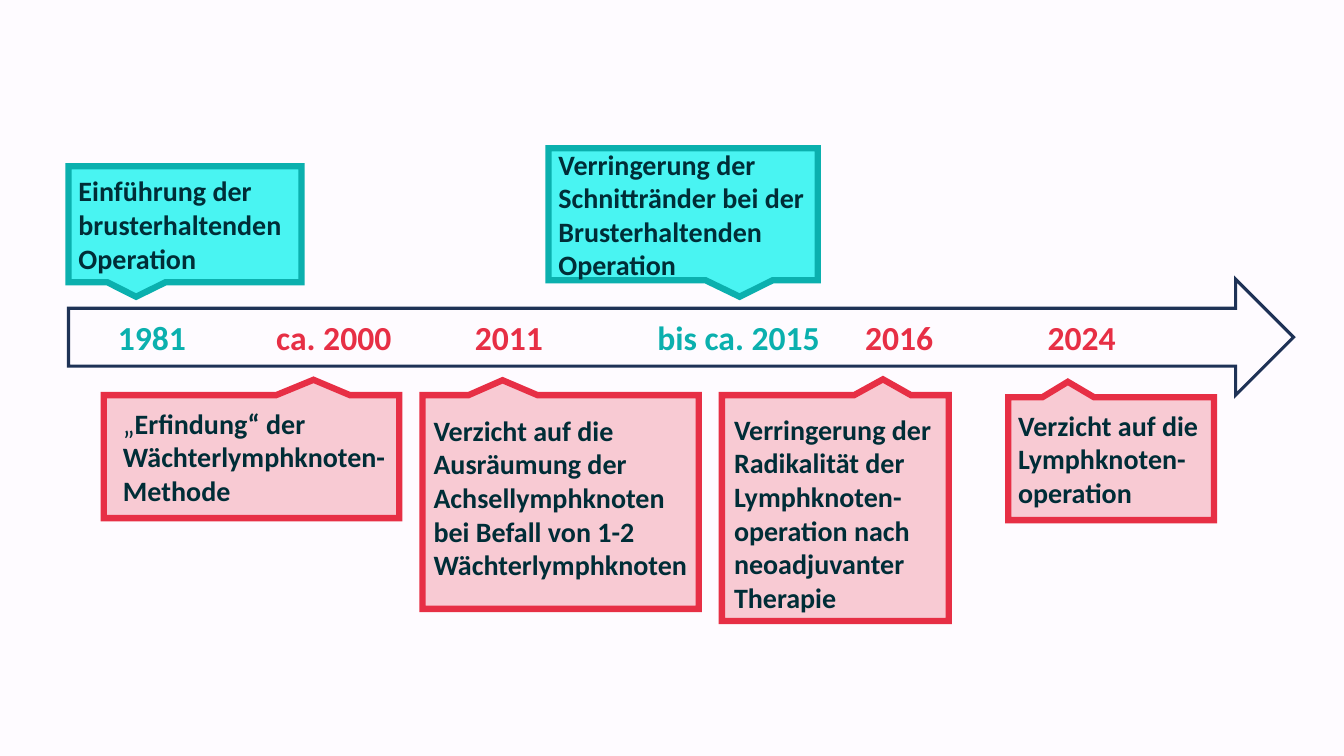
from lxml import etree
from pptx import Presentation
from pptx.dml.color import RGBColor
from pptx.enum.shapes import MSO_SHAPE as Shape
from pptx.enum.text import MSO_ANCHOR as Anchor
from pptx.oxml.ns import qn
from pptx.util import Inches, Pt

COLORS = {
    "paper": "FEFBFF", "navy": "1E3256", "ink": "002D37",
    "teal": "0BB0AE", "aqua": "49F4F2", "red": "E72F45", "rose": "F8CAD3",
}
COLS, ROWS = 133.3, 75


def rgb(name):
    return RGBColor.from_string(COLORS[name])


def add_text(p, text, size=20, color="ink", bold=True, font="Calibri"):
    r = p.add_run()
    r.text = text
    r.font.name, r.font.size, r.font.bold = font, Pt(size), bold
    r.font.color.rgb = rgb(color)


class Timeline:
    """Draws on one slide in grid units of 133.3 columns by 75 rows."""

    def __init__(self, prs):
        self.cell_w = prs.slide_width / COLS
        self.cell_h = prs.slide_height / ROWS
        self.s = prs.slides.add_slide(prs.slide_layouts[6])
        fill = self.s.background.fill
        fill.solid()
        fill.fore_color.rgb = rgb("paper")

    def x(self, cols):
        return round(cols * self.cell_w)

    def y(self, rows):
        return round(rows * self.cell_h)

    def box(self, left, top, width, height):
        return self.x(left), self.y(top), self.x(width), self.y(height)

    def shape(self, kind, at, line, weight, fill=None):
        sp = self.s.shapes.add_shape(kind, *self.box(*at))
        sp.shadow.inherit = False
        if fill:
            sp.fill.solid()
            sp.fill.fore_color.rgb = rgb(fill)
        else:
            sp.fill.background()
        sp.line.color.rgb = rgb(line)
        sp.line.width = Pt(weight)
        ln = sp.line._get_or_add_ln()
        etree.SubElement(ln, qn("a:miter"), lim="800000")
        return sp

    def frame(self, sp, left, top, right=0.5, bottom=0.5, anchor=Anchor.TOP):
        """Set wrapping, insets and anchor; return the first paragraph."""
        tf = sp.text_frame
        tf.word_wrap, tf.vertical_anchor = True, anchor
        tf.margin_left, tf.margin_right = self.x(left), self.x(right)
        tf.margin_top, tf.margin_bottom = self.y(top), self.y(bottom)
        p = tf.paragraphs[0]
        p.alignment = 1
        return p

    def callout(self, at, tip, runs, line, fill, inset, anchor):
        sp = self.shape(Shape.RECTANGULAR_CALLOUT, at, line, 4.5, fill)
        sp.adjustments[0], sp.adjustments[1] = tip
        p = self.frame(sp, *inset, anchor=anchor)
        for text, bold in runs:
            add_text(p, text, bold=bold)

    def above(self, at, side, text):
        self.callout(at, (side * 0.21, 0.625), [(text, True)],
                     "teal", "aqua", (1, 0.5), Anchor.MIDDLE)

    def below(self, at, side, inset, *runs, reach=0.625):
        self.callout(at, (side * 0.21, -reach), runs,
                     "red", "rose", inset, Anchor.TOP)

    def years(self, at, entries):
        """Write the years on one line, each at its own tab stop."""
        start = entries[0][0]
        p = self.frame(self.s.shapes.add_textbox(*self.box(*at)), start - at[0], 0.5)
        tabs = etree.SubElement(p._p.get_or_add_pPr(), qn("a:tabLst"))
        for i, (col, year, color) in enumerate(entries):
            if i:
                etree.SubElement(tabs, qn("a:tab"), pos=str(self.x(col - start)), algn="l")
            add_text(p, "\t" * (i > 0) + year, size=24, color=color)


def main():
    prs = Presentation()
    prs.slide_width, prs.slide_height = Inches(13.33), Inches(7.5)
    t = Timeline(prs)

    t.shape(Shape.RIGHT_ARROW, (6.8, 27.7, 121.5, 11.5), "navy", 2.25)
    t.years((7.8, 30.9, 115.6, 5), [
        (11.7, "1981", "teal"), (27.4, "ca. 2000", "red"), (47.1, "2011", "red"),
        (65.2, "bis ca. 2015", "teal"), (85.8, "2016", "red"), (103.9, "2024", "red"),
    ])

    t.above((6.8, 16.5, 23.1, 11.5), -1, "Einführung der brusterhaltenden Operation")
    t.above((54.4, 14.7, 26.7, 13.1), 1,
            "Verringerung der Schnittränder bei der Brusterhaltenden Operation")

    t.below((10.3, 39.2, 29.3, 12.2), 1, (1.9, 1.1),
            ("„", False), ("Erfindung“ der Wächterlymphknoten-Methode", True))
    t.below((41.9, 39.2, 27.4, 21.2), -1, (1.1, 1.8),
            ("Verzicht auf die Ausräumung der Achsellymphknoten "
             "bei Befall von 1-2 Wächterlymphknoten", True), reach=0.57)
    t.below((71.6, 39.2, 22.5, 22.4), 1, (1.2, 1.7),
            ("Verringerung der Radikalität der Lymphknoten-operation "
             "nach neoadjuvanter Therapie", True), reach=0.57)
    t.below((100, 39.4, 20.4, 12.2), -1, (1, 1.1),
            ("Verzicht auf die Lymphknoten-operation", True))

    prs.save("out.pptx")


if __name__ == "__main__":
    main()
